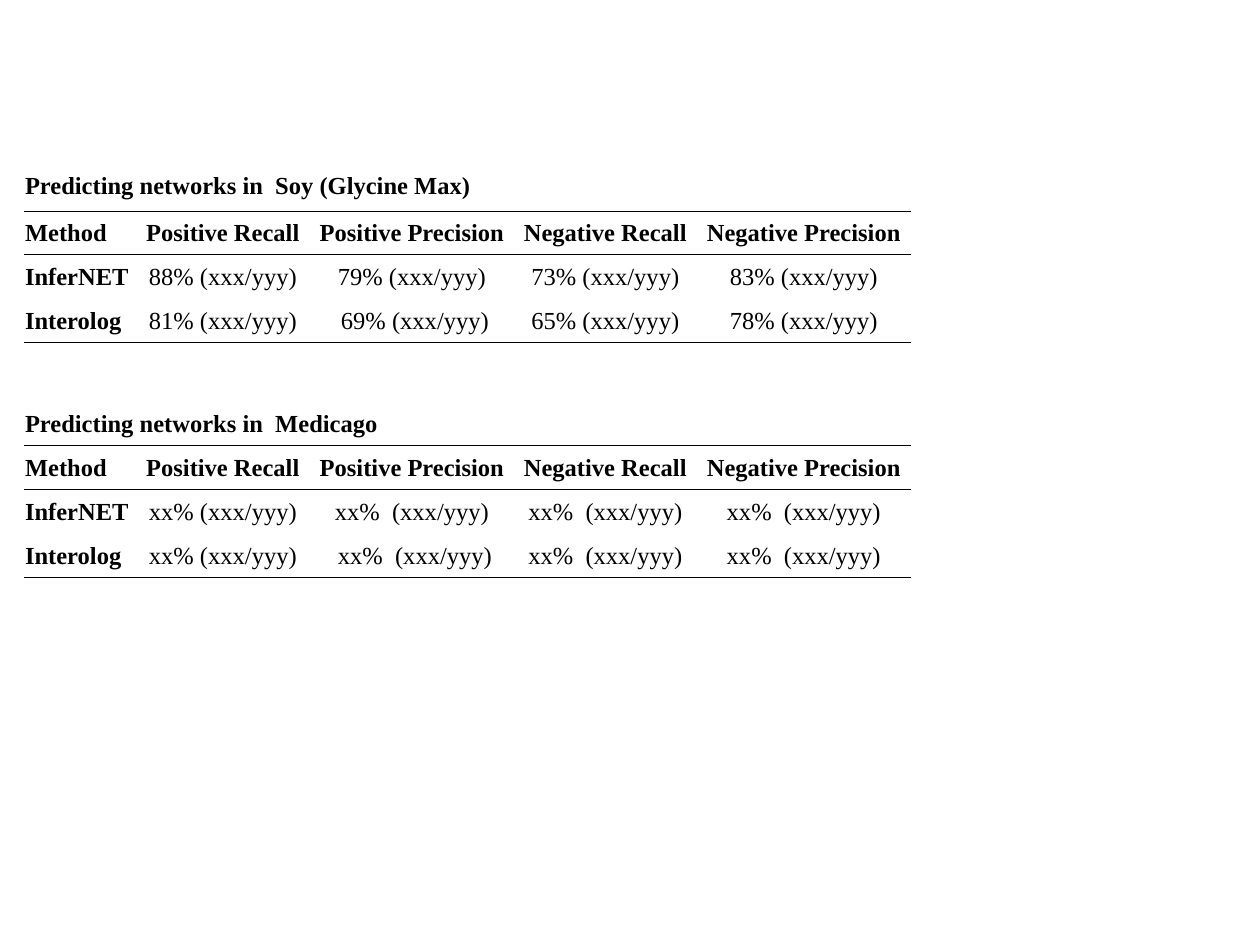
from pptx import Presentation
from pptx.dml.color import RGBColor as RGB
from pptx.enum.text import MSO_ANCHOR as Anchor, PP_ALIGN as Align
from pptx.util import Pt
from lxml.etree import SubElement as Sub
from pptx.oxml.ns import qn

# Content: one block per species
HEAD = ["Method", "Positive Recall", "Positive Precision",
        "Negative Recall", "Negative Precision"]
BLOCKS = [
    ("Predicting networks in  Soy (Glycine Max)", [
        ["InferNET", "88% (xxx/yyy)", "79% (xxx/yyy)",
         "73% (xxx/yyy)", "83% (xxx/yyy)"],
        ["Interolog", "81% (xxx/yyy)", " 69% (xxx/yyy)",
         "65% (xxx/yyy)", "78% (xxx/yyy)"],
    ]),
    ("Predicting networks in  Medicago", [
        ["InferNET", "xx% (xxx/yyy)", "xx%  (xxx/yyy)",
         "xx%  (xxx/yyy)", "xx%  (xxx/yyy)"],
        ["Interolog", "xx% (xxx/yyy)", " xx%  (xxx/yyy)",
         "xx%  (xxx/yyy)", "xx%  (xxx/yyy)"],
    ]),
]

# Layout in px
PX = 914400 // 126
LEFT, TOP = 24, 161
COLS = [118, 174, 204, 183, 208]
ROWS = [50, 44, 44, 44, 58, 45, 44, 44, 44]
INSET = 1
PAD = [1, 13, 13, 13, 7]  # right margin of each column
STEP = 5                  # rows from one block to the next
RULED = {0, 1, 3}         # rows of a block with a line below
COLORS = {"ink": "000000"}
FONT = {"name": "Times New Roman", "size": Pt(14)}


def edge(cell, side, shown):
    props = cell._tc.get_or_add_tcPr()
    line = Sub(props, qn("a:ln" + side), w=str(Pt(0.5) if shown else 0))
    if shown:
        fill = Sub(line, qn("a:solidFill"))
        Sub(fill, qn("a:srgbClr"), val=COLORS["ink"])
    else:
        Sub(line, qn("a:noFill"))


def write(cell, text, col, bold):
    margins = {"margin_left": INSET, "margin_right": PAD[col],
               "margin_top": INSET, "margin_bottom": 0}
    for name, px in margins.items():
        setattr(cell, name, px * PX)
    cell.vertical_anchor = Anchor.MIDDLE
    para = cell.text_frame.paragraphs[0]
    para.alignment = Align.CENTER if col else Align.LEFT
    run = para.add_run()
    run.text = text
    for name, value in FONT.items():
        setattr(run.font, name, value)
    run.font.bold = bold
    run.font.color.rgb = RGB.from_string(COLORS["ink"])


deck = Presentation()
deck.slide_width, deck.slide_height = 1260 * PX, 945 * PX
slide = deck.slides.add_slide(deck.slide_layouts[6])

# Table grid
table = slide.shapes.add_table(
    len(ROWS), len(COLS), LEFT * PX, TOP * PX,
    sum(COLS) * PX, sum(ROWS) * PX).table
table.first_row = table.horz_banding = False
for col, px in zip(table.columns, COLS):
    col.width = px * PX
for row, px in zip(table.rows, ROWS):
    row.height = px * PX

# Rules and clear fills
for r in range(len(ROWS)):
    for c in range(len(COLS)):
        cell = table.cell(r, c)
        lines = {"L": False, "R": False,
                 "T": r > 0 and (r - 1) % STEP in RULED,
                 "B": r % STEP in RULED}
        for side, shown in lines.items():
            edge(cell, side, shown)
        cell.fill.background()

# Text of each block
for b, (title, data) in enumerate(BLOCKS):
    top = b * STEP
    table.cell(top, 0).merge(table.cell(top, len(COLS) - 1))
    write(table.cell(top, 0), title, 0, True)
    for r, row in enumerate([HEAD] + data):
        for c, text in enumerate(row):
            write(table.cell(top + 1 + r, c), text, c, r == 0 or c == 0)

deck.save("out.pptx")
